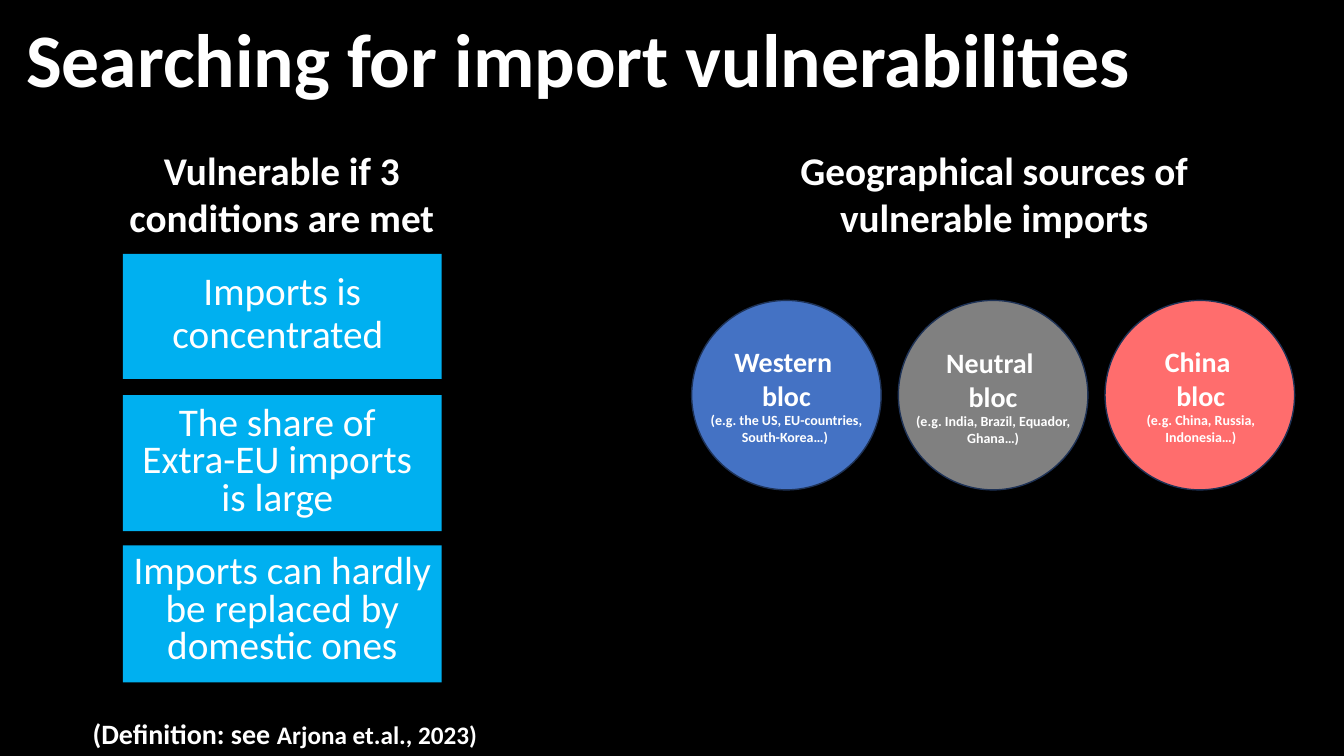
from pptx import Presentation
from pptx.dml.color import RGBColor
from pptx.enum.shapes import MSO_SHAPE as Shape
from pptx.enum.text import MSO_ANCHOR as Anchor, PP_ALIGN as Align
from pptx.util import Inches, Pt

COLORS = {
    "background": "000000",
    "text": "FFFFFF",
    "condition": "00B0F0",
    "western": "4472C4",
    "neutral": "808080",
    "china": "FF6D6D",
    "outline": "1E3256",
}
FONT = "Calibri"

# top and height of the box, top and width of its text, line spacing, wording
CONDITIONS = [
    (2.52, 1.24, 2.65, 3.16, 0.9, "Imports is concentrated "),
    (3.92, 1.35, 3.98, 3.06, 0.8, "The share of Extra-EU imports is large"),
    (5.41, 1.36, 5.45, 3.16, 0.8, "Imports can hardly be replaced by domestic ones"),
]
# colour, name, examples, offset and width of the label within the circle
BLOCS = [
    ("western", "Western ", "(e.g. the US, EU-countries, South-Korea…) ", 0, 0.39, 1.88),
    ("neutral", "Neutral ", "(e.g. India, Brazil, Equador, Ghana…)", 0, 0.4, 1.88),
    ("china", "China ", "(e.g. China, Russia, Indonesia…)", 0.17, 0.39, 1.56),
]


def rgb(name):
    return RGBColor.from_string(COLORS[name])


def place(part, left, top, width, height):
    part.left, part.top = Inches(left), Inches(top)
    part.width, part.height = Inches(width), Inches(height)


def write(frame, paragraphs, align=Align.CENTER, bold=True):
    """Fill the frame; each paragraph is a list of (text, size) runs."""
    frame.word_wrap = True
    frame.vertical_anchor = Anchor.TOP
    for index, runs in enumerate(paragraphs):
        paragraph = frame.add_paragraph() if index else frame.paragraphs[0]
        paragraph.alignment = align
        for text, size in runs:
            run = paragraph.add_run()
            run.text = text
            run.font.name, run.font.size, run.font.bold = FONT, Pt(size), bold
            run.font.color.rgb = rgb("text")


def add_text(slide, box, paragraphs, **style):
    frame = slide.shapes.add_textbox(*map(Inches, box)).text_frame
    write(frame, paragraphs, **style)
    return frame


def add_filled(slide, kind, box, color):
    shape = slide.shapes.add_shape(kind, *map(Inches, box))
    shape.shadow.inherit = False
    shape.fill.solid()
    shape.fill.fore_color.rgb = rgb(color)
    shape.line.fill.background()
    return shape


def add_title(slide, box):
    title = slide.shapes.title
    place(title, *box)
    write(title.text_frame, [[("Searching for import vulnerabilities", 54)]], align=Align.LEFT)


def add_conditions(slide, left, width):
    add_text(slide, (left - 0.24, 1.4, 3.63, 1.04),
             [[("Vulnerable if 3 conditions are met", 28)]])
    for top, height, text_top, text_width, spacing, wording in CONDITIONS:
        add_filled(slide, Shape.RECTANGLE, (left, top, width, height), "condition")
        text_box = (left, text_top, text_width, top + height - text_top)
        frame = add_text(slide, text_box, [[(wording, 28)]], bold=False)
        paragraph = frame.paragraphs[0]
        paragraph.line_spacing = spacing
        paragraph.space_before, paragraph.space_after = Pt(10), Pt(6)
    add_text(slide, (left - 0.4, 7.06, 4.2, 0.44),
             [[("(Definition: see ", 20), ("Arjona et.al., 2023)", 18)]], align=Align.LEFT)


def add_blocs(slide, left, top, diameter, pitch):
    add_text(slide, (left + 0.45, 1.4, 5.1, 1.04),
             [[("Geographical sources of vulnerable imports", 28)]])
    for index, (color, name, examples, dx, dy, label_width) in enumerate(BLOCS):
        x = left + index * pitch
        circle = add_filled(slide, Shape.OVAL, (x, top, diameter, diameter), color)
        circle.line.color.rgb = rgb("outline")
        circle.line.width = Pt(1)
        add_text(slide, (x + dx, top + dy, label_width, 1.11),
                 [[(name, 20)], [("bloc", 20)], [(examples, 10)]])


def main():
    deck = Presentation()
    deck.slide_width, deck.slide_height = Inches(13.33), Inches(7.5)
    slide = deck.slides.add_slide(deck.slide_layouts[5])
    slide.background.fill.solid()
    slide.background.fill.fore_color.rgb = rgb("background")
    add_title(slide, (0.16, 0.07, 12.23, 1.01))
    add_conditions(slide, left=1.22, width=3.16)
    add_blocs(slide, left=6.86, top=2.98, diameter=1.88, pitch=2.05)
    deck.save("out.pptx")


if __name__ == "__main__":
    main()
